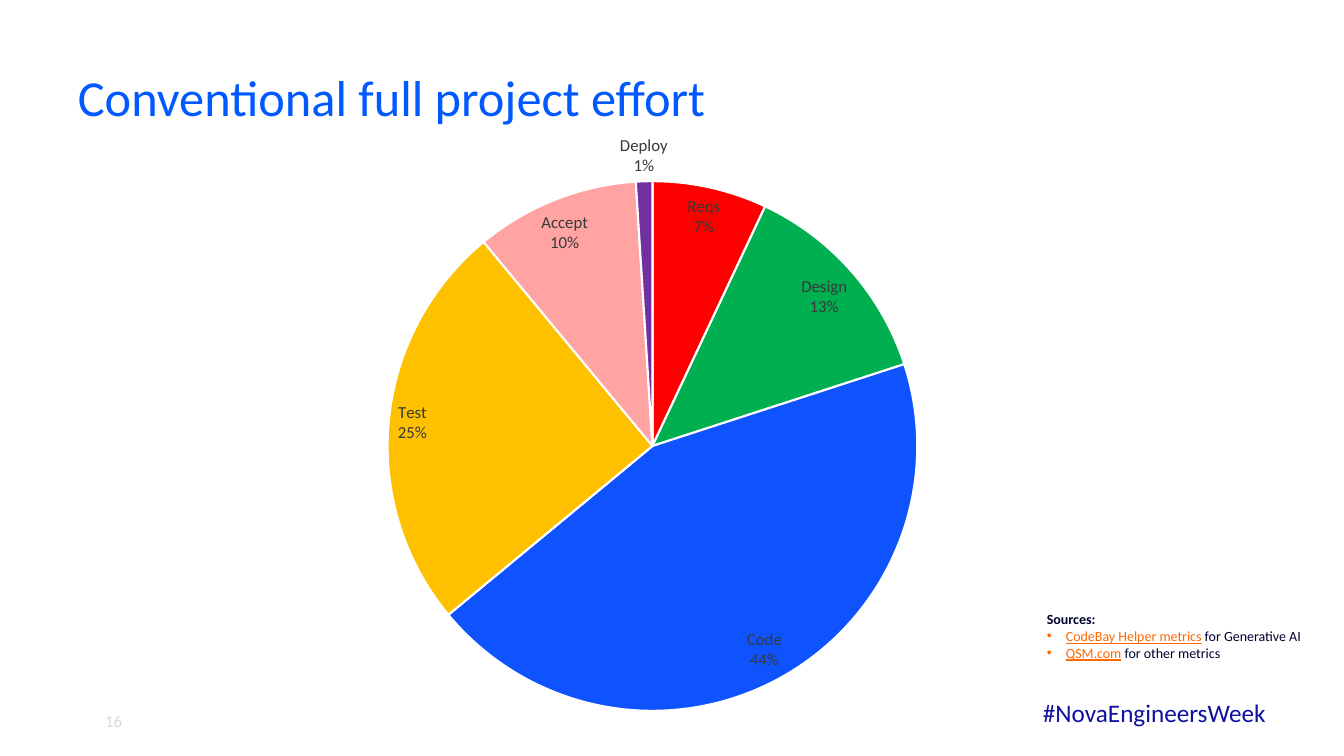
from dataclasses import dataclass

from lxml.etree import SubElement
from pptx import Presentation
from pptx.chart.data import CategoryChartData
from pptx.dml.color import RGBColor
from pptx.enum.chart import XL_CHART_TYPE, XL_LABEL_POSITION
from pptx.enum.text import MSO_ANCHOR, PP_ALIGN
from pptx.oxml import parse_xml
from pptx.oxml.ns import nsdecls, qn
from pptx.util import Emu, Pt

EMU_PER_PX = 914400 / 100.8


@dataclass(frozen=True)
class Theme:
    font: str = "Calibri"
    title: str = "0058FF"
    hashtag: str = "10109F"
    body: str = "000030"
    accent: str = "FF6700"
    page: str = "D8D9DA"
    label: str = "363A3B"
    border: str = "FFFFFF"
    title_size: int = 36
    hashtag_size: int = 18
    small_size: int = 12
    source_size: int = 10


THEME = Theme()

# Phase, share of effort in percent, slice colour
PHASES = [
    ("Reqs", 7, "FF0000"),
    ("Design", 13, "00B050"),
    ("Code", 44, "0F53FF"),
    ("Test", 25, "FFC000"),
    ("Accept", 10, "FFA3A3"),
    ("Deploy", 1, "7030A0"),
]

SOURCES = [
    ("CodeBay Helper metrics", " for Generative AI"),
    ("QSM.com", " for other metrics"),
]


def px(length):
    return Emu(round(length * EMU_PER_PX))


def style_font(font, size, color, bold=False):
    font.name = THEME.font
    font.size = Pt(size)
    font.bold = bold
    font.color.rgb = RGBColor.from_string(color)


def add_frame(slide, left, top, width, height, anchor=MSO_ANCHOR.TOP):
    frame = slide.shapes.add_textbox(px(left), px(top), px(width), px(height)).text_frame
    frame.word_wrap = True
    frame.vertical_anchor = anchor
    return frame


def write_line(frame, text, size, color, bold=False):
    line = frame.paragraphs[0]
    line.text = text
    style_font(line.font, size, color, bold)
    return line


def add_source(frame, link, remark):
    entry = frame.add_paragraph()
    properties = entry._p.get_or_add_pPr()
    properties.set("marL", str(px(19)))
    properties.set("indent", str(px(-19)))
    bullet_color = SubElement(properties, qn("a:buClr"))
    SubElement(bullet_color, qn("a:srgbClr")).set("val", THEME.accent)
    SubElement(properties, qn("a:buFont")).set("typeface", "Arial")
    SubElement(properties, qn("a:buChar")).set("char", "•")
    style_font(entry.font, THEME.source_size, THEME.body)
    link_run = entry.add_run()
    link_run.text = link
    link_run.font.underline = True
    link_run.font.color.rgb = RGBColor.from_string(THEME.accent)
    entry.add_run().text = remark


def add_effort_pie(slide, left, top, width, height):
    effort = CategoryChartData()
    effort.categories = [phase for phase, _, _ in PHASES]
    effort.add_series("Series 1", [share for _, share, _ in PHASES])
    chart = slide.shapes.add_chart(
        XL_CHART_TYPE.PIE, px(left), px(top), px(width), px(height), effort
    ).chart
    chart.has_title = False
    chart.has_legend = False
    style_font(chart.font, THEME.source_size, THEME.label)
    plot = chart.plots[0]
    plot.vary_by_categories = True

    # Slices
    series = plot.series[0]
    for index, (_, _, color) in enumerate(PHASES):
        slice_format = series.points[index].format
        slice_format.fill.solid()
        slice_format.fill.fore_color.rgb = RGBColor.from_string(color)
        slice_format.line.color.rgb = RGBColor.from_string(THEME.border)
        slice_format.line.width = Pt(1.5)

    # Phase and percentage on two lines
    labels = series.data_labels
    labels.show_category_name = True
    labels.show_percentage = True
    labels.show_value = False
    labels.position = XL_LABEL_POSITION.BEST_FIT
    style_font(labels.font, THEME.small_size, THEME.label)
    separator = parse_xml(f"<c:separator {nsdecls('c')}>\n</c:separator>")
    labels._element.find(qn("c:showBubbleSize")).addnext(separator)

    # Circle inside the chart frame
    plot_area = chart._chartSpace.chart.plotArea
    for automatic in plot_area.findall(qn("c:layout")):
        plot_area.remove(automatic)
    plot_area.insert(0, parse_xml(
        f'<c:layout {nsdecls("c")}><c:manualLayout><c:layoutTarget val="inner"/>'
        '<c:xMode val="edge"/><c:yMode val="edge"/><c:x val="0.12"/><c:y val="0.1"/>'
        '<c:w val="0.76"/><c:h val="0.88"/></c:manualLayout></c:layout>'
    ))


def main():
    deck = Presentation()
    deck.slide_width, deck.slide_height = px(1344), px(756)
    slide = deck.slides.add_slide(deck.slide_layouts[6])

    # Hashtag
    hashtag = add_frame(slide, 1033, 692, 261, 40)
    write_line(hashtag, "#NovaEngineersWeek", THEME.hashtag_size, THEME.hashtag)

    # Sources
    sources = add_frame(slide, 1037, 606, 305, 61)
    write_line(sources, "Sources:", THEME.source_size, THEME.body, bold=True)
    for link, remark in SOURCES:
        add_source(sources, link, remark)

    # Title
    title = add_frame(slide, 68, 65, 1207, 71, MSO_ANCHOR.MIDDLE)
    heading = write_line(
        title, "Conventional full project effort", THEME.title_size, THEME.title
    )
    heading.line_spacing = 0.9

    # Page number
    page = add_frame(slide, 68, 701, 54, 40, MSO_ANCHOR.MIDDLE)
    page.margin_left = page.margin_right = page.margin_top = page.margin_bottom = 0
    number = write_line(page, "16", THEME.small_size, THEME.page)
    number.alignment = PP_ALIGN.RIGHT

    # Effort by phase
    add_effort_pie(slide, 298, 121, 709, 602)

    deck.save("out.pptx")


if __name__ == "__main__":
    main()
